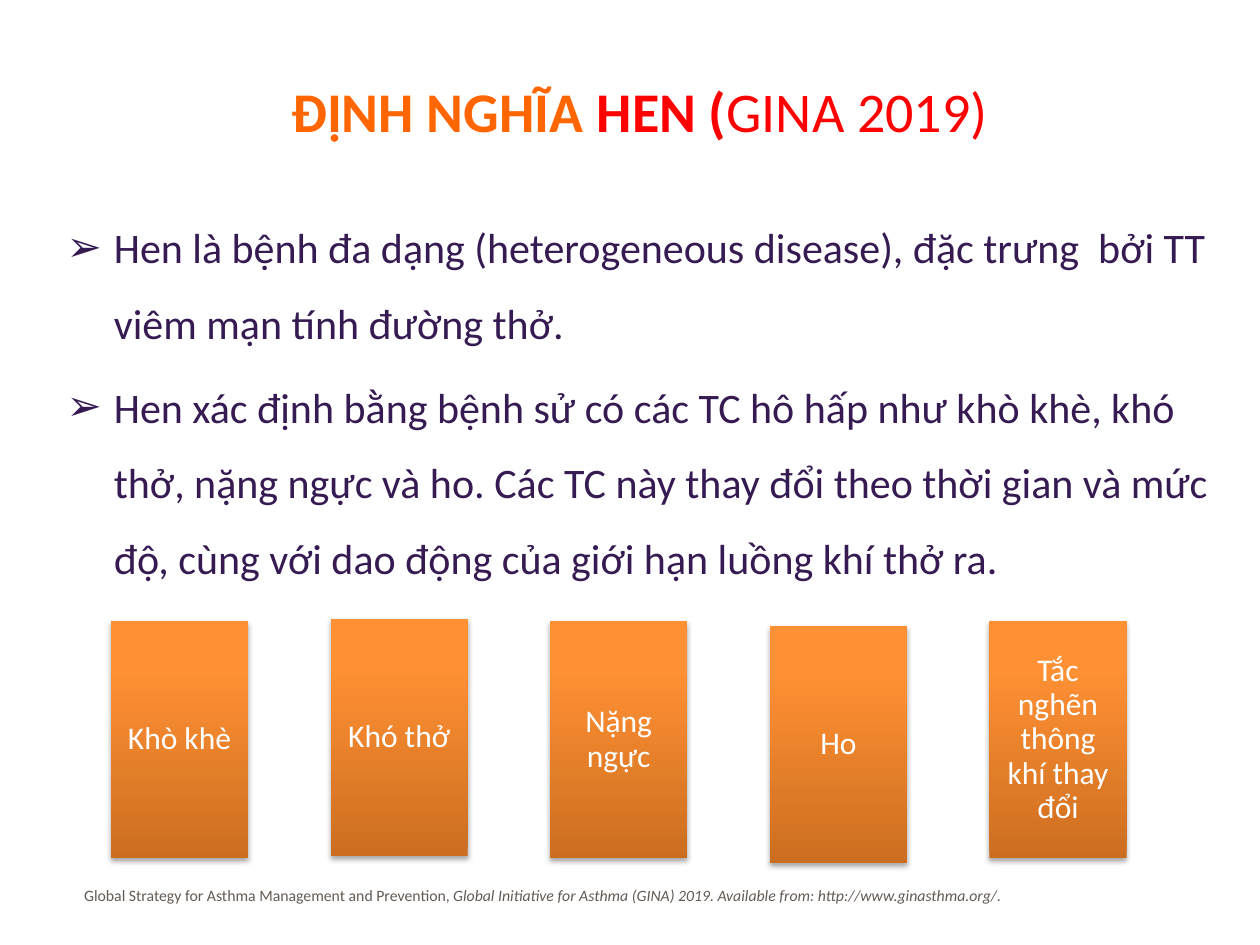
from copy import deepcopy
from dataclasses import dataclass

from lxml import etree
from pptx import Presentation
from pptx.dml.color import RGBColor
from pptx.enum import shapes, text
from pptx.oxml import ns
from pptx.util import Pt


@dataclass(frozen=True)
class Theme:
    font: str = "Calibri"
    orange: str = "FF6600"
    red: str = "FF0000"
    body: str = "361B53"
    source: str = "635A54"
    card_text: str = "FFFFFF"
    card_stops: tuple = ((0, "CC6E20"), (0.8, "FF9034"), (1, "FF9136"))
    title_size: float = 32
    body_size: float = 24
    card_size: float = 18
    source_size: float = 9


THEME = Theme()

TITLE = [
    ("ĐỊNH NGHĨA ", THEME.orange, True, False),
    ("HEN (", THEME.red, True, False),
    ("GINA 2019)", THEME.red, False, False),
]
DEFINITION = [
    "Hen là bệnh đa dạng (heterogeneous disease), đặc trưng  bởi TT viêm mạn tính đường thở.",
    "Hen xác định bằng bệnh sử có các TC hô hấp như khò khè, khó thở, nặng ngực và ho. "
    "Các TC này thay đổi theo thời gian và mức độ, cùng với dao động của giới hạn luồng khí thở ra.",
]
SYMPTOMS = [
    ("Khò khè", 355),
    ("Khó thở", 353.5),
    ("Nặng ngực", 355),
    ("Ho", 357.7),
    ("Tắc nghẽn thông khí thay đổi", 355),
]
SOURCE = [
    ("Global Strategy for Asthma Management and Prevention, ", THEME.source, False, False),
    ("Global Initiative for Asthma (GINA) 2019. Available from: http://www.ginasthma.org/.",
     THEME.source, False, True),
]

TITLE_BOX = (31, 37.5, 669, 50.4)
DEFINITION_BOX = (31, 108.7, 681, 175.7)
SOURCE_BOX = (41, 502.5, 659, 18)
CARD_LEFT, CARD_PITCH, CARD_WIDTH, CARD_HEIGHT = 63.4, 125.5, 78.4, 135.5
CARD_INSET = 5
BULLET_INDENT = 27


def add_run(paragraph, wording, size, color, bold=False, italic=False):
    run = paragraph.add_run()
    run.text = wording
    run.font.name = THEME.font
    run.font.size = Pt(size)
    run.font.bold = bold
    run.font.italic = italic
    run.font.color.rgb = RGBColor.from_string(color)


def add_text_box(slide, box):
    frame = slide.shapes.add_textbox(*map(Pt, box)).text_frame
    frame.word_wrap = True
    return frame


def set_bullet(paragraph, mark):
    properties = paragraph._p.get_or_add_pPr()
    properties.set("marL", str(Pt(BULLET_INDENT)))
    properties.set("indent", str(-Pt(BULLET_INDENT)))
    etree.SubElement(properties, ns.qn("a:buFont"), typeface="Wingdings 2" if mark == "" else "Arial")
    etree.SubElement(properties, ns.qn("a:buChar"), char=mark)


def set_gradient(card):
    card.fill.gradient()
    card.fill.gradient_angle = 90
    stop_list = card._element.spPr.find(".//" + ns.qn("a:gsLst"))
    stop_list.append(deepcopy(stop_list[-1]))
    for stop, (position, color) in zip(card.fill.gradient_stops, THEME.card_stops):
        stop.position = position
        stop.color.rgb = RGBColor.from_string(color)


def set_shadow(card):
    card.shadow.inherit = False
    effects = card._element.spPr.find(ns.qn("a:effectLst"))
    shadow = etree.SubElement(effects, ns.qn("a:outerShdw"), blurRad=str(Pt(3.1)),
                              dist=str(Pt(1.8)), dir="5400000", rotWithShape="0")
    color = etree.SubElement(shadow, ns.qn("a:srgbClr"), val="000000")
    etree.SubElement(color, ns.qn("a:alpha"), val="35000")


def add_title(slide):
    title = slide.shapes.title
    title.left, title.top, title.width, title.height = map(Pt, TITLE_BOX)
    title.text_frame.vertical_anchor = text.MSO_ANCHOR.MIDDLE
    heading = title.text_frame.paragraphs[0]
    heading.alignment = text.PP_ALIGN.CENTER
    for wording, color, bold, italic in TITLE:
        add_run(heading, wording, THEME.title_size, color, bold, italic)


def add_definition(slide):
    frame = add_text_box(slide, DEFINITION_BOX)
    for index, statement in enumerate(DEFINITION):
        paragraph = frame.add_paragraph() if index else frame.paragraphs[0]
        paragraph.line_spacing = 1.5
        paragraph.space_before = Pt(0.2 * THEME.body_size)
        set_bullet(paragraph, "➢")
        add_run(paragraph, statement, THEME.body_size, THEME.body)


def add_symptoms(slide):
    for index, (symptom, top) in enumerate(SYMPTOMS):
        box = (CARD_LEFT + index * CARD_PITCH, top, CARD_WIDTH, CARD_HEIGHT)
        card = slide.shapes.add_shape(shapes.MSO_SHAPE.RECTANGLE, *map(Pt, box))
        set_gradient(card)
        card.line.fill.background()
        set_shadow(card)
        frame = card.text_frame
        frame.word_wrap = True
        frame.vertical_anchor = text.MSO_ANCHOR.MIDDLE
        frame.margin_left = frame.margin_right = Pt(CARD_INSET)
        frame.margin_top = frame.margin_bottom = Pt(CARD_INSET)
        label = frame.paragraphs[0]
        label.alignment = text.PP_ALIGN.CENTER
        label.line_spacing = 0.9
        add_run(label, symptom, THEME.card_size, THEME.card_text)


def add_source(slide):
    citation = add_text_box(slide, SOURCE_BOX).paragraphs[0]
    for wording, color, bold, italic in SOURCE:
        add_run(citation, wording, THEME.source_size, color, bold, italic)


def main():
    deck = Presentation()
    deck.slide_width, deck.slide_height = Pt(720), Pt(540)
    slide = deck.slides.add_slide(deck.slide_layouts.get_by_name("Title Only"))
    add_title(slide)
    add_definition(slide)
    add_symptoms(slide)
    add_source(slide)
    deck.save("out.pptx")


if __name__ == "__main__":
    main()
